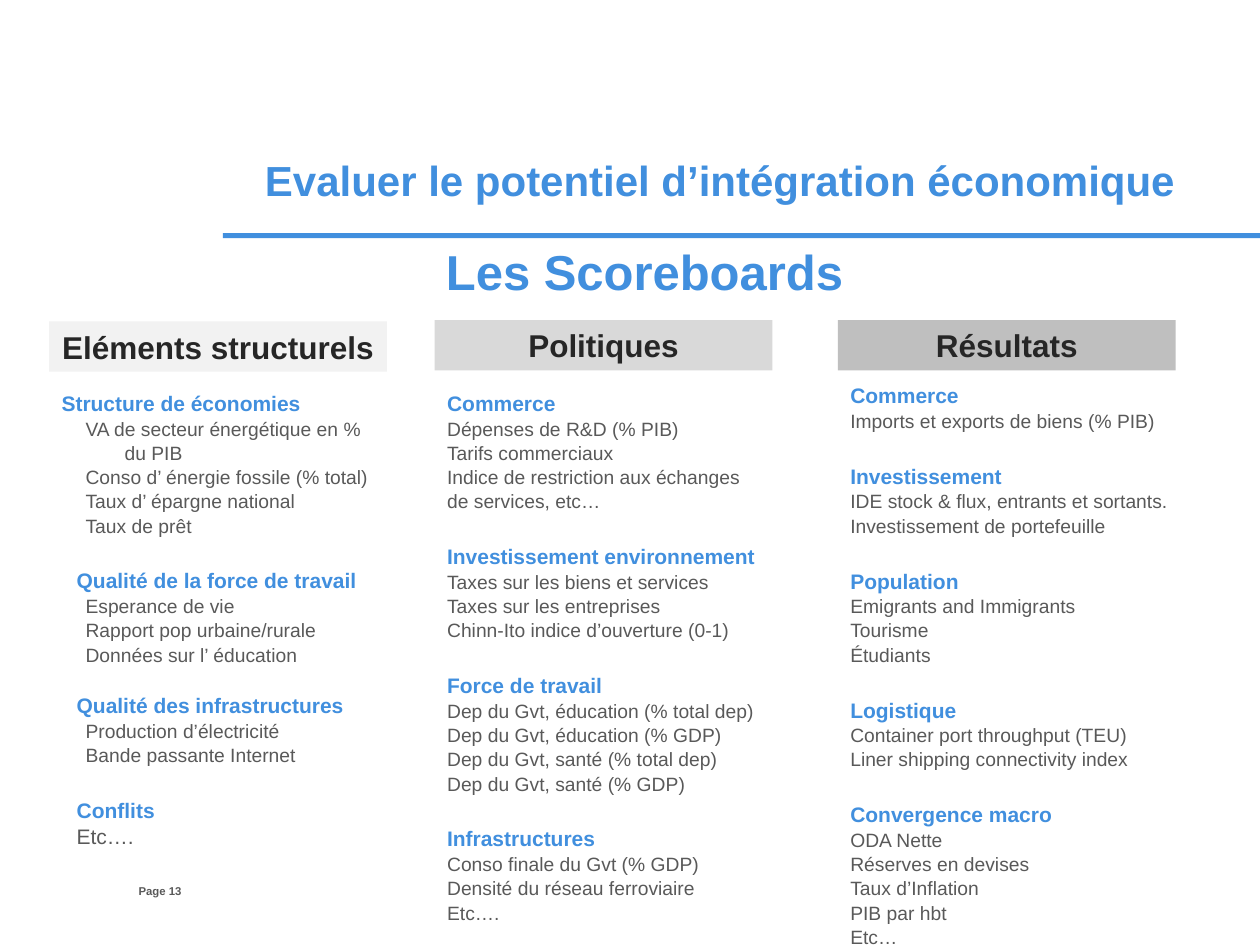
import pptx
import pptx.util
import pptx.dml.color
import pptx.enum.shapes
import pptx.enum.text
import lxml.etree

Inches, Pt = pptx.util.Inches, pptx.util.Pt
ALIGN = pptx.enum.text.PP_ALIGN
BLUE, GREY, DARK = "418FDE", "595959", "262626"


def paint(color_format, value):
    color_format.rgb = pptx.dml.color.RGBColor.from_string(value)


def write_text(frame, text, size, color, bold=False, align=ALIGN.LEFT,
               before=0, spacing=1.0, margin=0, indent=0):
    """Fill the first empty paragraph of the frame, or append a new one."""
    paragraph = frame.paragraphs[0] if not frame.text else frame.add_paragraph()
    paragraph.alignment = align
    paragraph.space_before = Pt(before)
    paragraph.line_spacing = spacing
    properties = paragraph._p.get_or_add_pPr()
    properties.set("marL", str(Inches(margin)))
    properties.set("indent", str(Inches(indent)))
    lxml.etree.SubElement(properties, pptx.oxml.ns.qn("a:buNone"))
    run = paragraph.add_run()
    run.text = text
    run.font.name, run.font.size, run.font.bold = "Arial", Pt(size), bold
    paint(run.font.color, color)


presentation = pptx.Presentation()
presentation.slide_width, presentation.slide_height = Inches(10), Inches(7.5)
slide = presentation.slides.add_slide(presentation.slide_layouts[1])
shapes = slide.shapes

# Rule under the title, reaching the right edge
rule = shapes.add_shape(pptx.enum.shapes.MSO_SHAPE.RECTANGLE,
                        Inches(1.77), Inches(1.85), Inches(8.23), Inches(0.04))
rule.shadow.inherit = False
rule.fill.solid()
paint(rule.fill.fore_color, BLUE)
rule.line.fill.background()

# Title, subtitle and page number
page = shapes.add_textbox(0, 0, 0, 0)
labels = [
    (shapes.title, (1.65, 1.23, 8.13, 0.57),
     "Evaluer le potentiel d’intégration économique", 24, BLUE, ALIGN.CENTER),
    (slide.placeholders[1], (2.73, 1.92, 4.77, 0.57),
     "Les Scoreboards", 28, BLUE, ALIGN.CENTER),
    (page, (0.75, 7.02, 0.69, 0.11), "Page 13", 6.5, GREY, ALIGN.RIGHT),
]
for shape, box, text, size, color, align in labels:
    shape.left, shape.top, shape.width, shape.height = map(Inches, box)
    frame = shape.text_frame
    frame.margin_left = frame.margin_right = frame.margin_top = frame.margin_bottom = 0
    frame.word_wrap = True
    frame.auto_size = pptx.enum.text.MSO_AUTO_SIZE.NONE
    frame.vertical_anchor = pptx.enum.text.MSO_ANCHOR.TOP
    write_text(frame, text, size, color, bold=True, align=align)

# Columns: header, fill, left, header top, list top, list width, list height, groups
columns = [
    ("Eléments structurels", "F2F2F2", 0.39, 2.55, 3.04, 2.68, 3.82, [
        ("Structure de économies",
         ["VA de secteur énergétique en % du PIB", "Conso d’ énergie fossile (% total)",
          "Taux d’ épargne national", "Taux de prêt"]),
        ("Qualité de la force de travail",
         ["Esperance de vie", "Rapport pop urbaine/rurale", "Données sur l’ éducation"]),
        ("Qualité des infrastructures",
         ["Production d’électricité", "Bande passante Internet"]),
        ("Conflits", ["Etc…."]),
    ]),
    ("Politiques", "D9D9D9", 3.45, 2.54, 3.04, 2.68, 4.22, [
        ("Commerce",
         ["Dépenses de R&D (% PIB)", "Tarifs commerciaux",
          "Indice de restriction aux échanges de services, etc…"]),
        ("Investissement environnement",
         ["Taxes sur les biens et services", "Taxes sur les entreprises",
          "Chinn-Ito indice d’ouverture (0-1)"]),
        ("Force de travail",
         ["Dep du Gvt, éducation (% total dep)", "Dep du Gvt, éducation (% GDP)",
          "Dep du Gvt, santé (% total dep)", "Dep du Gvt, santé (% GDP)"]),
        ("Infrastructures",
         ["Conso finale du Gvt (% GDP)", "Densité du réseau ferroviaire", "Etc…."]),
    ]),
    ("Résultats", "BFBFBF", 6.65, 2.54, 2.98, 2.85, 4.46, [
        ("Commerce", ["Imports et exports de biens (% PIB)"]),
        ("Investissement",
         ["IDE stock & flux, entrants et sortants.", "Investissement de portefeuille"]),
        ("Population", ["Emigrants and Immigrants", "Tourisme", "Étudiants"]),
        ("Logistique",
         ["Container port throughput (TEU)", "Liner shipping connectivity index"]),
        ("Convergence macro",
         ["ODA Nette", "Réserves en devises", "Taux d’Inflation", "PIB par hbt", "Etc…"]),
    ]),
]

for header, fill, left, header_top, list_top, width, height, groups in columns:
    # Header band
    band = shapes.add_shape(pptx.enum.shapes.MSO_SHAPE.RECTANGLE, Inches(left),
                            Inches(header_top), Inches(2.68), Inches(0.4))
    band.shadow.inherit = False
    band.fill.solid()
    paint(band.fill.fore_color, fill)
    band.line.fill.background()
    band.text_frame.margin_left = band.text_frame.margin_right = Inches(0.05)
    write_text(band.text_frame, header, 18, DARK, bold=True, align=ALIGN.CENTER)

    # Grouped indicators; the first column is indented
    frame = shapes.add_textbox(Inches(left), Inches(list_top),
                               Inches(width), Inches(height)).text_frame
    frame.word_wrap = True
    indented = header == "Eléments structurels"
    for heading, items in groups:
        first = heading == groups[0][0]
        heading_margin = 0.12 if indented and not first else 0
        gap = 0 if first else 14.5 if heading == "Qualité des infrastructures" else 17
        write_text(frame, heading, 12, BLUE, bold=True, before=gap,
                   spacing=1.05, margin=heading_margin)
        for item in items:
            if heading == "Conflits":
                write_text(frame, item, 12, GREY, spacing=1.05, margin=heading_margin)
            else:
                write_text(frame, item, 11, GREY, spacing=1.05,
                           margin=0.5 if indented else 0,
                           indent=-0.31 if indented else 0)

presentation.save("out.pptx")
